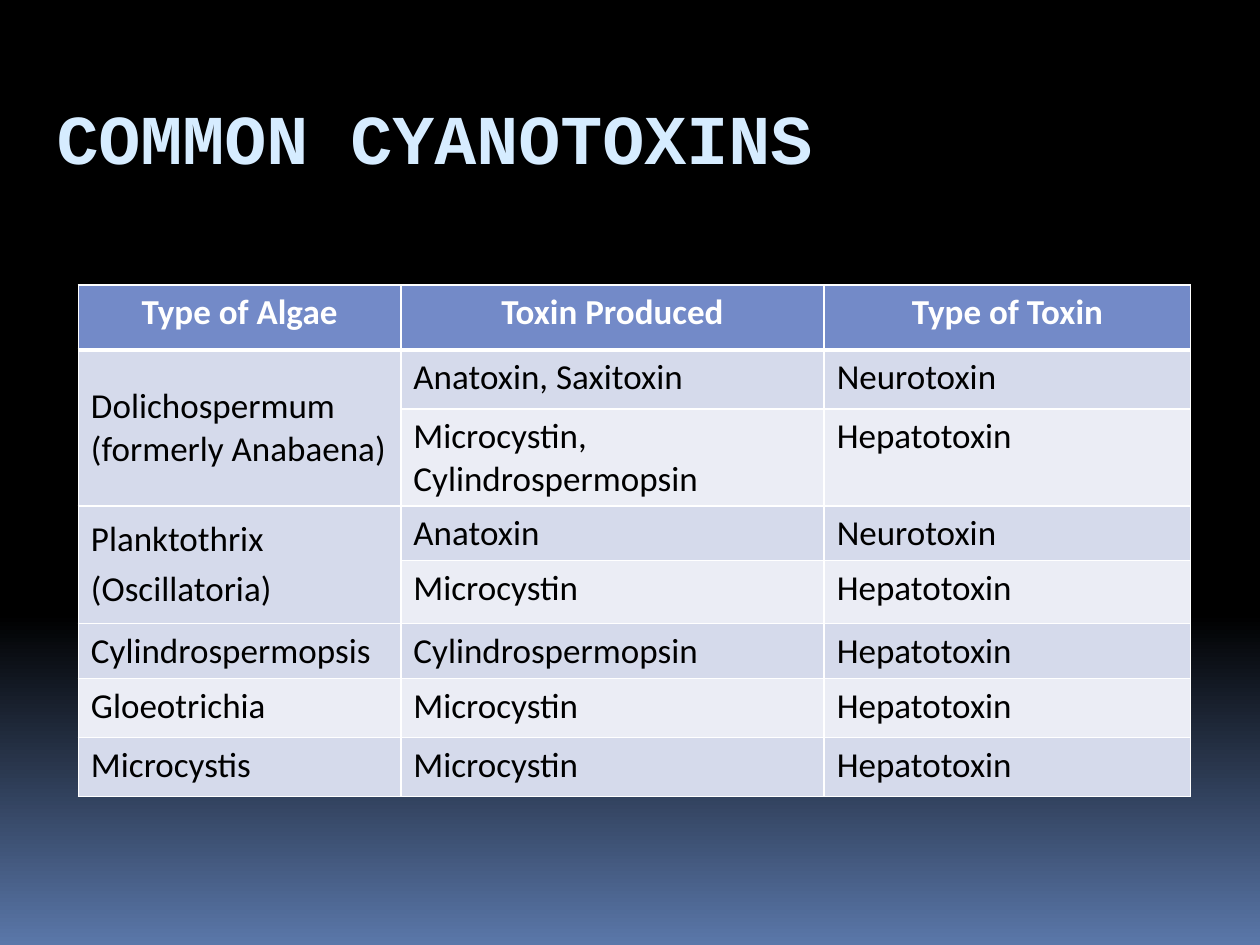
from copy import deepcopy
from dataclasses import dataclass

from lxml import etree
from pptx import Presentation
from pptx.dml.color import RGBColor
from pptx.enum import text
from pptx.oxml import ns
from pptx.util import Pt


@dataclass(frozen=True)
class Theme:
    black: str = "000000"
    white: str = "FFFFFF"
    horizon: str = "5A77A9"
    title: str = "D6ECFF"
    header: str = "738AC8"
    bands: tuple = ("EBEDF5", "D5DAEB")
    title_font: str = "Courier New"
    body_font: str = "Calibri"
    title_size: int = 40
    body_size: int = 20


THEME = Theme()

COLUMN_WIDTHS = (184.3, 241.9, 209.5)
ROW_HEIGHTS = (37.2, 33.7, 55.4, 31, 36, 31.5, 33.7, 33.7)
HEADINGS = ("Type of Algae", "Toxin Produced", "Type of Toxin")
# Each alga, one entry per paragraph, with its (toxin, type) rows.
ALGAE = (
    (("Dolichospermum (formerly Anabaena)",),
     (("Anatoxin, Saxitoxin", "Neurotoxin"),
      ("Microcystin, Cylindrospermopsin", "Hepatotoxin"))),
    (("Planktothrix", "(Oscillatoria)"),
     (("Anatoxin", "Neurotoxin"), ("Microcystin", "Hepatotoxin"))),
    (("Cylindrospermopsis",), (("Cylindrospermopsin", "Hepatotoxin"),)),
    (("Gloeotrichia",), (("Microcystin", "Hepatotoxin"),)),
    (("Microcystis",), (("Microcystin", "Hepatotoxin"),)),
)


def rgb(value):
    return RGBColor.from_string(value)


def add_run(paragraph, words, font, size, color, bold=False):
    run = paragraph.add_run()
    run.text = words
    run.font.name = font
    run.font.size = Pt(size)
    run.font.bold = bold
    run.font.color.rgb = rgb(color)


def paint_background(slide):
    """Black down to 65 %, then fading to blue at the bottom edge."""
    fill = slide.background.fill
    fill.gradient()
    fill.gradient_angle = 270
    first, last = fill.gradient_stops
    first.color.rgb = rgb(THEME.black)
    last.color.rgb = rgb(THEME.horizon)
    stop_list = next(slide.element.iter(ns.qn("a:gsLst")))
    middle = deepcopy(stop_list[0])
    middle.set("pos", "65000")
    stop_list.insert(1, middle)


def add_title(slide, left, top, width, height):
    box = slide.shapes.add_textbox(Pt(left), Pt(top), Pt(width), Pt(height))
    frame = box.text_frame
    frame.word_wrap = True
    frame.margin_top, frame.margin_bottom = Pt(11), Pt(0)
    add_run(frame.paragraphs[0], "COMMON CYANOTOXINS", THEME.title_font,
            THEME.title_size, THEME.title, bold=True)


def set_borders(cell, top, bottom):
    properties = cell._tc.get_or_add_tcPr()
    for side, width in (("L", 1), ("R", 1), ("T", top), ("B", bottom)):
        line = etree.SubElement(properties, ns.qn(f"a:ln{side}"), w=str(Pt(width)))
        fill = etree.SubElement(line, ns.qn("a:solidFill"))
        etree.SubElement(fill, ns.qn("a:srgbClr"), val=THEME.white)


def style_cell(cell, row):
    set_borders(cell, top=3 if row == 1 else 1, bottom=3 if row == 0 else 1)
    cell.fill.solid()
    cell.fill.fore_color.rgb = rgb(THEME.bands[row % 2] if row else THEME.header)
    cell.margin_left = cell.margin_right = Pt(7.2)
    cell.margin_top = cell.margin_bottom = Pt(3.6)


def write_cell(cell, lines, header=False):
    frame = cell.text_frame
    for index, line in enumerate(lines):
        paragraph = frame.add_paragraph() if index else frame.paragraphs[0]
        if index:
            paragraph.space_before = Pt(4)
        if header:
            paragraph.alignment = text.PP_ALIGN.CENTER
        add_run(paragraph, line, THEME.body_font, THEME.body_size,
                THEME.white if header else THEME.black, bold=header)


def add_toxin_table(slide, left, top):
    table = slide.shapes.add_table(
        len(ROW_HEIGHTS), len(COLUMN_WIDTHS), Pt(left), Pt(top),
        Pt(sum(COLUMN_WIDTHS)), Pt(sum(ROW_HEIGHTS))).table
    for column, width in zip(table.columns, COLUMN_WIDTHS):
        column.width = Pt(width)
    for index, (row, height) in enumerate(zip(table.rows, ROW_HEIGHTS)):
        row.height = Pt(height)
        for cell in row.cells:
            style_cell(cell, index)

    for column, heading in enumerate(HEADINGS):
        write_cell(table.cell(0, column), (heading,), header=True)
    row = 1
    for name_lines, toxins in ALGAE:
        name_cell = table.cell(row, 0)
        write_cell(name_cell, name_lines)
        if len(toxins) > 1:
            name_cell.merge(table.cell(row + len(toxins) - 1, 0))
            name_cell.vertical_anchor = text.MSO_ANCHOR.MIDDLE
        for toxin, kind in toxins:
            write_cell(table.cell(row, 1), (toxin,))
            write_cell(table.cell(row, 2), (kind,))
            row += 1


def main():
    presentation = Presentation()
    presentation.slide_width, presentation.slide_height = Pt(720), Pt(540)
    slide = presentation.slides.add_slide(presentation.slide_layouts[6])
    paint_background(slide)
    add_title(slide, 25.2, 43.2, 666, 55.4)
    add_toxin_table(slide, 44.8, 162.8)
    presentation.save("out.pptx")


if __name__ == "__main__":
    main()
